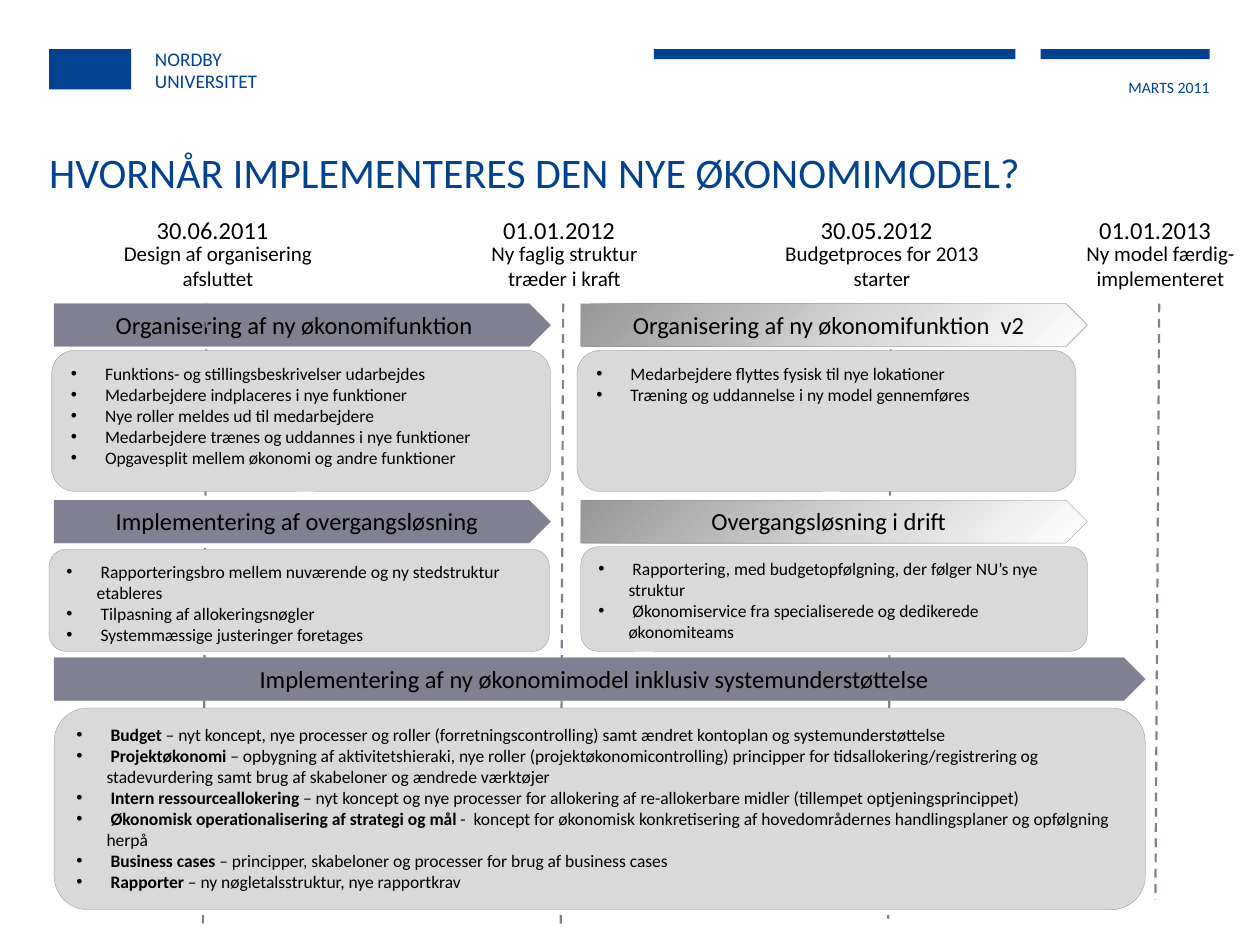
from lxml import etree
from pptx import Presentation
from pptx.dml.color import RGBColor
from pptx.enum.dml import MSO_LINE
from pptx.enum.shapes import MSO_CONNECTOR as Connector, MSO_SHAPE as Shape
from pptx.enum.text import MSO_ANCHOR as Anchor, MSO_AUTO_SIZE as AutoSize, PP_ALIGN as Align
from pptx.oxml import parse_xml
from pptx.oxml.ns import nsdecls, qn
from pptx.util import Inches, Pt

BLUE = RGBColor(0x03, 0x42, 0x8E)
SLATE = RGBColor(0x80, 0x80, 0x92)
LIGHT = RGBColor(0xD9, 0xD9, 0xD9)
BLACK = RGBColor(0, 0, 0)
FONT = "Calibri"
FADE_STOPS = [(0, "979797"), (56, "D7D7D7"), (100, "FFFFFF")]

# Grid: left edges and widths of the columns, tops of the arrow rows
LEFT, RIGHT = 0.43, 4.61
LEFT_WIDTH, RIGHT_WIDTH, FULL_WIDTH = 3.94, 4.02, 8.66
ROW_1, ROW_2, ROW_3 = 2.41, 3.97, 5.22
ARROW_HEIGHT = 0.34
DATE_WIDTH, CAPTION_WIDTH = 1.17, 1.81
HANG = 0.24

# date, caption, text centre, dashed line top x, bottom x, bottom y
MILESTONES = [
    ("30.06.2011", "Design af organisering afsluttet", 1.73, 1.64, 1.61, 7.37),
    ("01.01.2012", "Ny faglig struktur træder i kraft", 4.48, 4.47, 4.45, 7.37),
    ("30.05.2012", "Budgetproces for 2013 starter", 7.0, 7.07, 7.05, 7.29),
    ("01.01.2013", "Ny model færdig-implementeret", 9.21, 9.2, 9.17, 7.14),
]

# text, left, top, width, whether the fill fades
ARROWS = [
    ("Organisering af ny økonomifunktion ", LEFT, ROW_1, LEFT_WIDTH, False),
    ("Implementering af overgangsløsning", LEFT, ROW_2, LEFT_WIDTH, False),
    ("Implementering af ny økonomimodel inklusiv systemunderstøttelse",
     LEFT, ROW_3, FULL_WIDTH, False),
    ("Organisering af ny økonomifunktion  v2", RIGHT, ROW_1, RIGHT_WIDTH, True),
    ("Overgangsløsning i drift", RIGHT, ROW_2, RIGHT_WIDTH, True),
]

# left, top, width, height, then bullets as (bold lead, plain rest)
PANELS = [
    (0.41, 2.78, 3.96, 1.12, [
        ("", "Funktions- og stillingsbeskrivelser udarbejdes"),
        ("", "Medarbejdere indplaceres i nye funktioner"),
        ("", "Nye roller meldes ud til medarbejdere"),
        ("", "Medarbejdere trænes og uddannes i nye funktioner"),
        ("", "Opgavesplit mellem økonomi og andre funktioner"),
    ]),
    (0.39, 4.36, 3.97, 0.81, [
        ("", "Rapporteringsbro mellem nuværende og ny stedstruktur etableres"),
        ("", "Tilpasning af allokeringsnøgler"),
        ("", "Systemmæssige justeringer foretages"),
    ]),
    (RIGHT, 4.34, RIGHT_WIDTH, 0.83, [
        ("", "Rapportering, med budgetopfølgning, der følger NU’s nye struktur"),
        ("", "Økonomiservice fra specialiserede og dedikerede økonomiteams"),
    ]),
    (LEFT, 5.62, FULL_WIDTH, 1.6, [
        ("Budget", " – nyt koncept, nye processer og roller (forretningscontrolling) "
         "samt ændret kontoplan og systemunderstøttelse"),
        ("Projektøkonomi ", "– opbygning af aktivitetshieraki, nye roller "
         "(projektøkonomicontrolling) principper for tidsallokering/registrering og "
         "stadevurdering samt brug af skabeloner og ændrede værktøjer"),
        ("Intern ressourceallokering ", "– nyt koncept og nye processer for allokering "
         "af re-allokerbare midler (tillempet optjeningsprincippet)"),
        ("Økonomisk operationalisering af strategi og mål ", "-  koncept for økonomisk "
         "konkretisering af hovedområdernes handlingsplaner og opfølgning herpå"),
        ("Business cases ", "– principper, skabeloner og processer for brug af business cases"),
        ("Rapporter", " – ny nøgletalsstruktur, nye rapportkrav"),
    ]),
    (4.58, 2.78, 3.96, 1.12, [
        ("", "Medarbejdere flyttes fysisk til nye lokationer"),
        ("", "Træning og uddannelse i ny model gennemføres"),
    ]),
]


def apply(target, **values):
    for name, value in values.items():
        setattr(target, name, value)


def inches(*lengths):
    return [Inches(length) for length in lengths]


def add_span(para, text, size, color=BLACK, bold=False):
    span = para.add_run()
    span.text = text
    apply(span.font, name=FONT, size=Pt(size), bold=bold)
    span.font.color.rgb = color


def write_lines(frame, lines, size, color=BLACK, **para_format):
    for index, line in enumerate(lines):
        para = frame.add_paragraph() if index else frame.paragraphs[0]
        apply(para, **para_format)
        add_span(para, line, size, color)


def add_text(page, place, lines, size, color=BLACK, frame_format=None, **para_format):
    frame = page.shapes.add_textbox(*inches(*place)).text_frame
    apply(frame, **{"word_wrap": True, **(frame_format or {})})
    write_lines(frame, lines, size, color, **para_format)


def add_box(page, kind, place, fill, line=None):
    box = page.shapes.add_shape(kind, *inches(*place))
    box.shadow.inherit = False
    box.fill.solid()
    box.fill.fore_color.rgb = fill
    if line is None:
        box.line.fill.background()
    else:
        box.line.color.rgb = line
        box.line.width = Pt(0.14)
    return box


def fade(box):
    """Replace the solid fill with a diagonal grey gradient."""
    stops = "".join(f'<a:gs pos="{pos * 1000}"><a:srgbClr val="{color}"/></a:gs>'
                    for pos, color in FADE_STOPS)
    gradient = parse_xml(f'<a:gradFill {nsdecls("a")} rotWithShape="1"><a:gsLst>{stops}</a:gsLst>'
                         '<a:lin ang="2700000" scaled="0"/></a:gradFill>')
    props = box.fill._xPr
    props.replace(props.find(qn("a:solidFill")), gradient)


def add_arrow(page, text, left, top, width, fades):
    box = add_box(page, Shape.PENTAGON, (left, top, width, ARROW_HEIGHT), SLATE, SLATE)
    if fades:
        fade(box)
    apply(box.text_frame, word_wrap=True, vertical_anchor=Anchor.TOP,
          auto_size=AutoSize.SHAPE_TO_FIT_TEXT)
    write_lines(box.text_frame, [text], 14, alignment=Align.CENTER)


def add_panel(page, left, top, width, height, items):
    box = add_box(page, Shape.ROUNDED_RECTANGLE, (left, top, width, height), LIGHT, SLATE)
    frame = box.text_frame
    apply(frame, word_wrap=True, vertical_anchor=Anchor.TOP)
    for index, (lead, rest) in enumerate(items):
        para = frame.add_paragraph() if index else frame.paragraphs[0]
        para.alignment = Align.LEFT
        props = para._p.get_or_add_pPr()
        props.set("marL", str(Inches(HANG)))
        props.set("indent", str(-Inches(HANG)))
        etree.SubElement(props, qn("a:buFont")).set("typeface", "Arial")
        etree.SubElement(props, qn("a:buChar")).set("char", "•")
        if lead:
            add_span(para, " ", 10)
            add_span(para, lead, 10, bold=True)
            add_span(para, rest, 10)
        else:
            add_span(para, " " + rest, 10)


def add_dashed_line(page, x_top, x_bottom, bottom):
    line = page.shapes.add_connector(Connector.STRAIGHT, *inches(x_top, ROW_1, x_bottom, bottom))
    line.line.color.rgb = SLATE
    apply(line.line, width=Pt(1.25), dash_style=MSO_LINE.DASH)
    etree.SubElement(line._element.spPr, qn("a:effectLst"))


def add_header(page):
    tight = dict(margin_left=0, margin_top=0, margin_right=0, margin_bottom=0,
                 vertical_anchor=Anchor.BOTTOM, word_wrap=True)
    for left, width in [(8.26, 1.34), (5.19, 2.87)]:
        add_box(page, Shape.RECTANGLE, (left, 0.39, width, 0.08), BLUE)
    add_box(page, Shape.RECTANGLE, (0.39, 0.39, 0.65, 0.32), BLUE)
    add_text(page, (8.26, 0.61, 1.34, 0.16), ["MARTS 2011"], 9, BLUE, tight,
             alignment=Align.RIGHT, line_spacing=1.02)
    add_text(page, (1.23, 0.2, 2.23, 0.54), ["NORDBY", "UNIVERSITET"], 11, BLUE, tight,
             line_spacing=0.95)
    title = page.shapes.title
    apply(title, **dict(zip(("left", "top", "width", "height"), inches(0.39, 0.52, 9.21, 1.04))))
    apply(title.text_frame, auto_size=AutoSize.NONE, **tight)
    write_lines(title.text_frame, ["HVORNÅR IMPLEMENTERES DEN NYE ØKONOMIMODEL?"], 24, BLUE,
                alignment=Align.LEFT, line_spacing=0.83)


def add_milestone_text(page, date, caption, centre):
    grow = {"auto_size": AutoSize.SHAPE_TO_FIT_TEXT}
    add_text(page, (centre - DATE_WIDTH / 2, 1.39, DATE_WIDTH, 0.6), [date], 14,
             frame_format={**grow, "word_wrap": False}, line_spacing=Pt(36))
    add_text(page, (centre - CAPTION_WIDTH / 2, 1.86, CAPTION_WIDTH, 0.51), [caption], 12,
             frame_format=grow, alignment=Align.CENTER)


def main():
    deck = Presentation()
    deck.slide_width, deck.slide_height = inches(10, 7.5)
    page = deck.slides.add_slide(deck.slide_layouts[5])
    add_header(page)
    for date, caption, centre, *_ in MILESTONES:
        add_milestone_text(page, date, caption, centre)
    first_arrow, *other_arrows = ARROWS
    add_arrow(page, *first_arrow)
    for *_, x_top, x_bottom, bottom in MILESTONES:
        add_dashed_line(page, x_top, x_bottom, bottom)
    for arrow in other_arrows:
        add_arrow(page, *arrow)
    for panel in PANELS:
        add_panel(page, *panel)
    deck.save("out.pptx")


if __name__ == "__main__":
    main()
